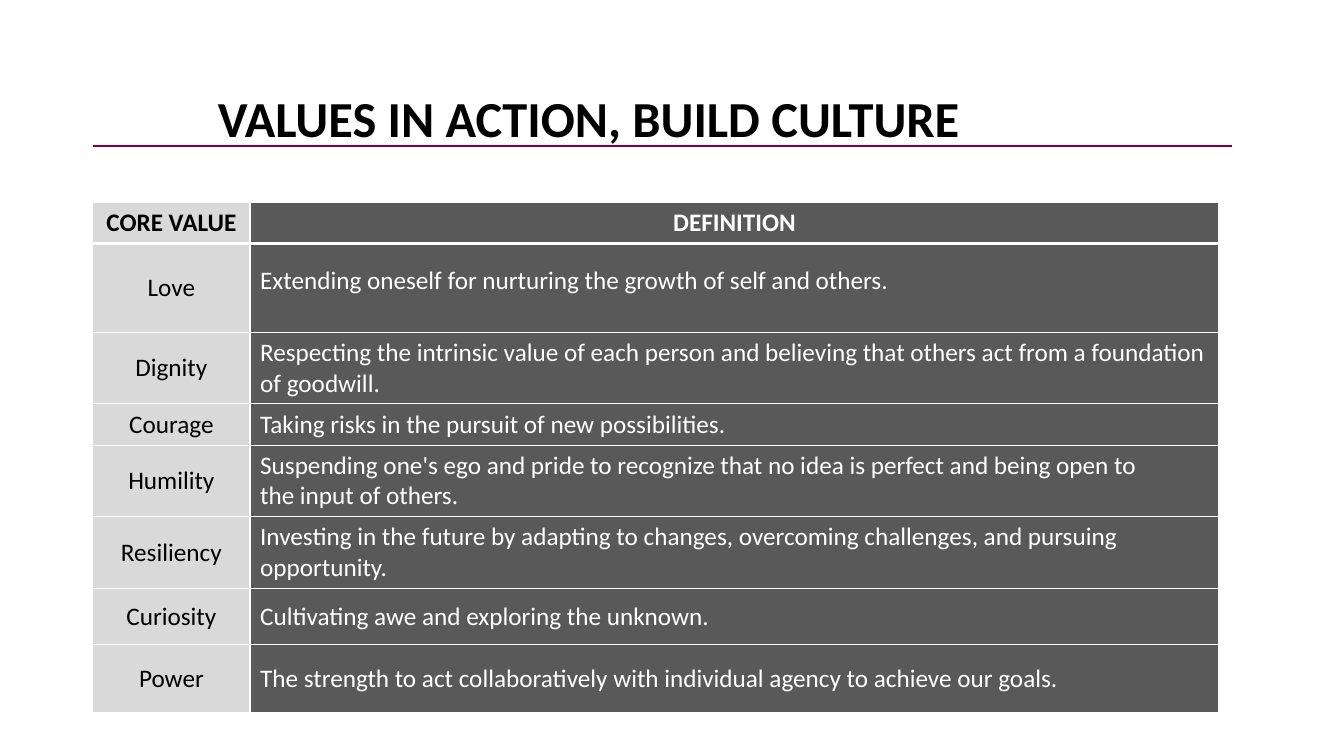
from lxml import etree
from pptx import Presentation
from pptx.dml.color import RGBColor
from pptx.enum.shapes import MSO_CONNECTOR
from pptx.enum.text import MSO_ANCHOR, PP_ALIGN
from pptx.oxml.ns import qn
from pptx.util import Inches, Pt

BLACK = RGBColor(0x00, 0x00, 0x00)
WHITE = RGBColor(0xFF, 0xFF, 0xFF)
LIGHT_GRAY = RGBColor(0xD9, 0xD9, 0xD9)
DARK_GRAY = RGBColor(0x59, 0x59, 0x59)
BURGUNDY = RGBColor(0x86, 0x00, 0x37)

HEADER = ("CORE VALUE", "DEFINITION")
VALUES = [
    ("Love", "Extending oneself for nurturing the growth of self and others."),
    ("Dignity", "Respecting the intrinsic value of each person and believing that "
                "others act from a foundation of goodwill."),
    ("Courage", "Taking risks in the pursuit of new possibilities."),
    ("Humility", "Suspending one's ego and pride to recognize that no idea is perfect "
                 "and being open to\nthe input of others."),
    ("Resiliency", "Investing in the future by adapting to changes, overcoming "
                   "challenges, and pursuing opportunity."),
    ("Curiosity", "Cultivating awe and exploring the unknown."),
    ("Power", "The strength to act collaboratively with individual agency to "
              "achieve our goals."),
]
COLUMN_WIDTHS = (1.56, 9.61)
ROW_HEIGHTS = (0.4, 0.88, 0.71, 0.41, 0.71, 0.71, 0.56, 0.67)


class SlideBuilder:
    font = "Calibri"
    title_size = Pt(36)
    table_size = Pt(18)

    def __init__(self, presentation):
        self.slide = presentation.slides.add_slide(presentation.slide_layouts[5])

    def format_text(self, text_frame, size, color, bold, alignment):
        for paragraph in text_frame.paragraphs:
            paragraph.alignment = alignment
            for run in paragraph.runs:
                run.font.name = self.font
                run.font.size = size
                run.font.bold = bold
                run.font.color.rgb = color

    def title(self, text, left, top, width, height, indent):
        shape = self.slide.shapes.title
        shape.left, shape.top = Inches(left), Inches(top)
        shape.width, shape.height = Inches(width), Inches(height)
        text_frame = shape.text_frame
        text_frame.text = text
        text_frame.word_wrap = True
        text_frame.vertical_anchor = MSO_ANCHOR.MIDDLE
        text_frame.margin_left = Inches(indent)
        text_frame.paragraphs[0].line_spacing = 0.9
        self.format_text(text_frame, self.title_size, BLACK, True, PP_ALIGN.LEFT)

    def borders(self, cell, color, **widths):
        """Draw the cell's edges; widths in points are keyed L, R, T and B."""
        properties = cell._tc.get_or_add_tcPr()
        for side, width in widths.items():
            line = etree.SubElement(properties, qn(f"a:ln{side}"), w=str(Pt(width)))
            fill = etree.SubElement(line, qn("a:solidFill"))
            etree.SubElement(fill, qn("a:srgbClr"), val=str(color))

    def table(self, rows, left, top, column_widths, row_heights):
        table = self.slide.shapes.add_table(
            len(rows), len(column_widths), Inches(left), Inches(top),
            Inches(sum(column_widths)), Inches(sum(row_heights))).table
        for column, width in zip(table.columns, column_widths):
            column.width = Inches(width)
        for row, height in zip(table.rows, row_heights):
            row.height = Inches(height)
        for row_index, texts in enumerate(rows):
            is_header = row_index == 0
            for column_index, text in enumerate(texts):
                is_name = column_index == 0
                cell = table.cell(row_index, column_index)
                cell.text_frame.text = text
                cell.vertical_anchor = MSO_ANCHOR.TOP if is_header else MSO_ANCHOR.MIDDLE
                self.borders(cell, WHITE, L=1, R=1,
                             T=3 if row_index == 1 else 1, B=3 if is_header else 1)
                cell.fill.solid()
                cell.fill.fore_color.rgb = LIGHT_GRAY if is_name else DARK_GRAY
                centered = is_header or is_name
                self.format_text(cell.text_frame, self.table_size,
                                 BLACK if is_name else WHITE, is_header,
                                 PP_ALIGN.CENTER if centered else PP_ALIGN.LEFT)
        return table

    def rule(self, left, right, y, color, width):
        line = self.slide.shapes.add_connector(
            MSO_CONNECTOR.STRAIGHT, Inches(left), Inches(y), Inches(right), Inches(y))
        line.line.color.rgb = color
        line.line.width = Pt(width)
        etree.SubElement(line._element.spPr, qn("a:effectLst"))


def main():
    presentation = Presentation()
    presentation.slide_width = Inches(13.33)
    presentation.slide_height = Inches(7.5)
    builder = SlideBuilder(presentation)
    builder.title("VALUES IN ACTION, BUILD CULTURE", 0.82, 0.48, 11.5, 1.45, indent=1.34)
    table = builder.table([HEADER] + VALUES, 0.92, 2.01, COLUMN_WIDTHS, ROW_HEIGHTS)
    table.cell(1, 1).margin_bottom = Inches(0.18)
    builder.rule(0.92, 12.22, 1.45, BURGUNDY, 1.25)
    presentation.save("out.pptx")


if __name__ == "__main__":
    main()
